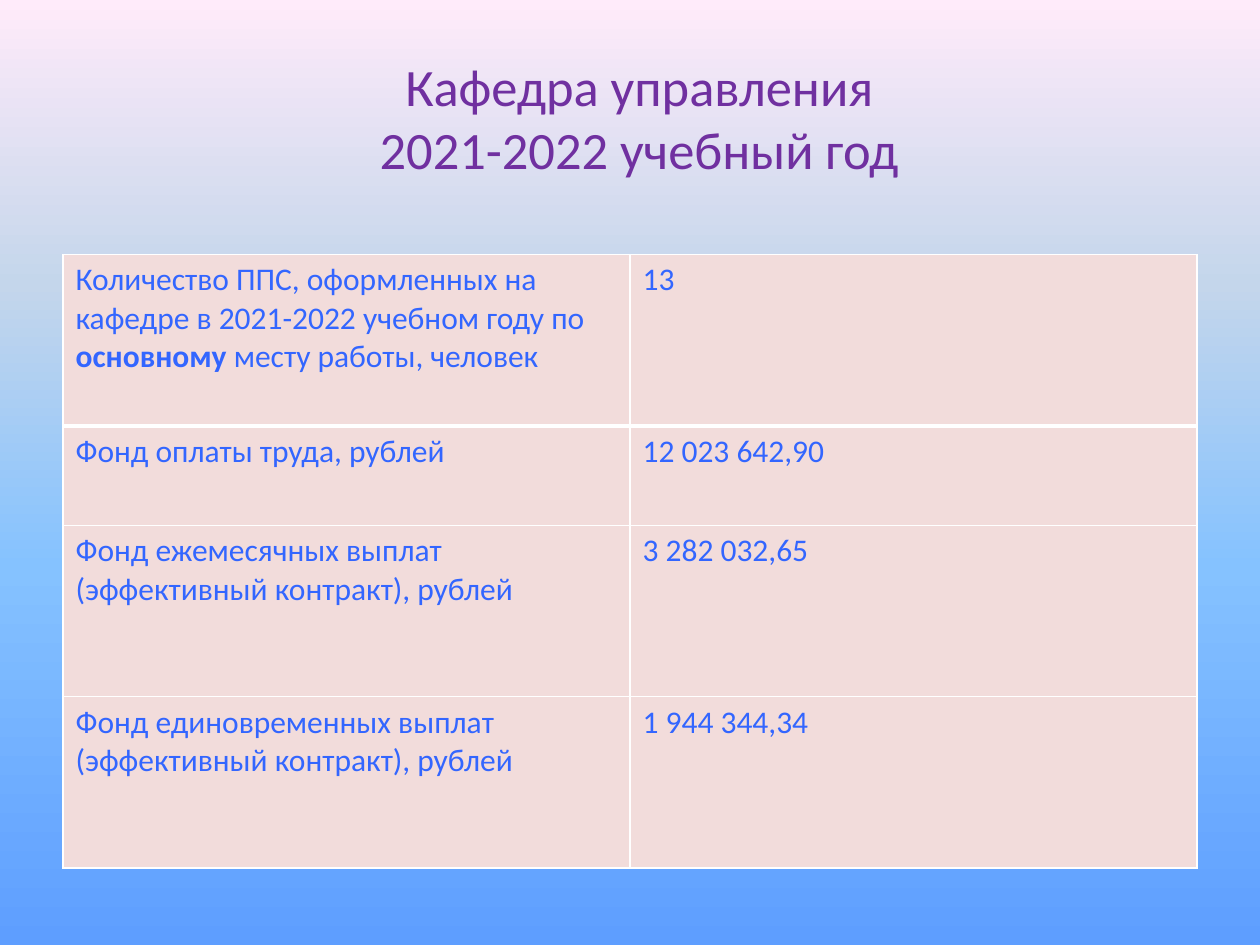
from lxml.etree import SubElement
from pptx import Presentation
from pptx.dml.color import RGBColor
from pptx.enum.text import MSO_ANCHOR, MSO_AUTO_SIZE, PP_ALIGN
from pptx.oxml.ns import qn
from pptx.util import Inches, Pt

COLORS = {
    "title": "7030A0",
    "text": "3366FF",
    "cell": "F2DCDB",
    "border": "FFFFFF",
}
BACKGROUND_STOPS = [(0, "5E9EFF"), (40, "85C2FF"), (70, "C4D6EB"), (100, "FFEBFA")]
ROW_HEIGHTS = [1.36, 0.79, 1.36, 1.36]
ROWS = [
    (
        [
            ("Количество ППС, оформленных на кафедре в 2021-2022 учебном году по ", False),
            ("основному", True),
            (" месту работы, человек", False),
        ],
        [("13", False)],
    ),
    ([("Фонд оплаты труда, рублей", False)], [("12 023 642,90", False)]),
    (
        [("Фонд ежемесячных выплат (эффективный контракт), рублей", False)],
        [("3 282 032,65", False)],
    ),
    (
        [("Фонд единовременных выплат (эффективный контракт), рублей", False)],
        [("1 944 344,34", False)],
    ),
]


class SlideBuilder:
    font_name = "Calibri"

    def __init__(self, presentation):
        self.slide = presentation.slides.add_slide(presentation.slide_layouts[5])

    def style_font(self, font, size, color):
        font.name = self.font_name
        font.size = Pt(size)
        font.color.rgb = RGBColor.from_string(COLORS[color])

    def background(self, stops):
        fill = self.slide.background.fill
        fill.gradient()
        fill.gradient_angle = 90
        stop_list = next(self.slide.background._cSld.iter(qn("a:gsLst")))
        for stop in list(stop_list):
            stop_list.remove(stop)
        for position, color in stops:
            stop = SubElement(stop_list, qn("a:gs"), pos=str(position * 1000))
            SubElement(stop, qn("a:srgbClr"), val=color)

    def title(self, text, left, top, width, height):
        shape = self.slide.shapes.title
        shape.left, shape.top = Inches(left), Inches(top)
        shape.width, shape.height = Inches(width), Inches(height)
        frame = shape.text_frame
        frame.auto_size = MSO_AUTO_SIZE.NONE
        frame.vertical_anchor = MSO_ANCHOR.MIDDLE
        paragraph = frame.paragraphs[0]
        paragraph.text = text
        paragraph.alignment = PP_ALIGN.CENTER
        self.style_font(paragraph.font, 30, "title")

    def borders(self, cell, top, bottom):
        properties = cell._tc.get_or_add_tcPr()
        for side, width in (("L", 1), ("R", 1), ("T", top), ("B", bottom)):
            line = SubElement(properties, qn(f"a:ln{side}"), w=str(Pt(width)))
            fill = SubElement(line, qn("a:solidFill"))
            SubElement(fill, qn("a:srgbClr"), val=COLORS["border"])

    def cell(self, cell, runs):
        cell.fill.solid()
        cell.fill.fore_color.rgb = RGBColor.from_string(COLORS["cell"])
        paragraph = cell.text_frame.paragraphs[0]
        self.style_font(paragraph.font, 18, "text")
        for text, bold in runs:
            run = paragraph.add_run()
            run.text = text
            self.style_font(run.font, 18, "text")
            run.font.bold = bold

    def table(self, rows, heights, left, top, width):
        table = self.slide.shapes.add_table(
            len(rows), len(rows[0]),
            Inches(left), Inches(top), Inches(width), Inches(sum(heights)),
        ).table
        for row_index, (row, height) in enumerate(zip(rows, heights)):
            table.rows[row_index].height = Inches(height)
            for column_index, runs in enumerate(row):
                cell = table.cell(row_index, column_index)
                self.borders(
                    cell,
                    top=3 if row_index == 1 else 1,
                    bottom=3 if row_index == 0 else 1,
                )
                self.cell(cell, runs)


def main():
    presentation = Presentation()
    presentation.slide_width = Inches(10)
    presentation.slide_height = Inches(7.5)
    builder = SlideBuilder(presentation)
    builder.background(BACKGROUND_STOPS)
    builder.title("Кафедра управления\v2021-2022 учебный год", 0.5, 0.3, 9.15, 1.25)
    builder.table(ROWS, ROW_HEIGHTS, 0.5, 2.02, 9)
    presentation.save("out.pptx")


if __name__ == "__main__":
    main()
